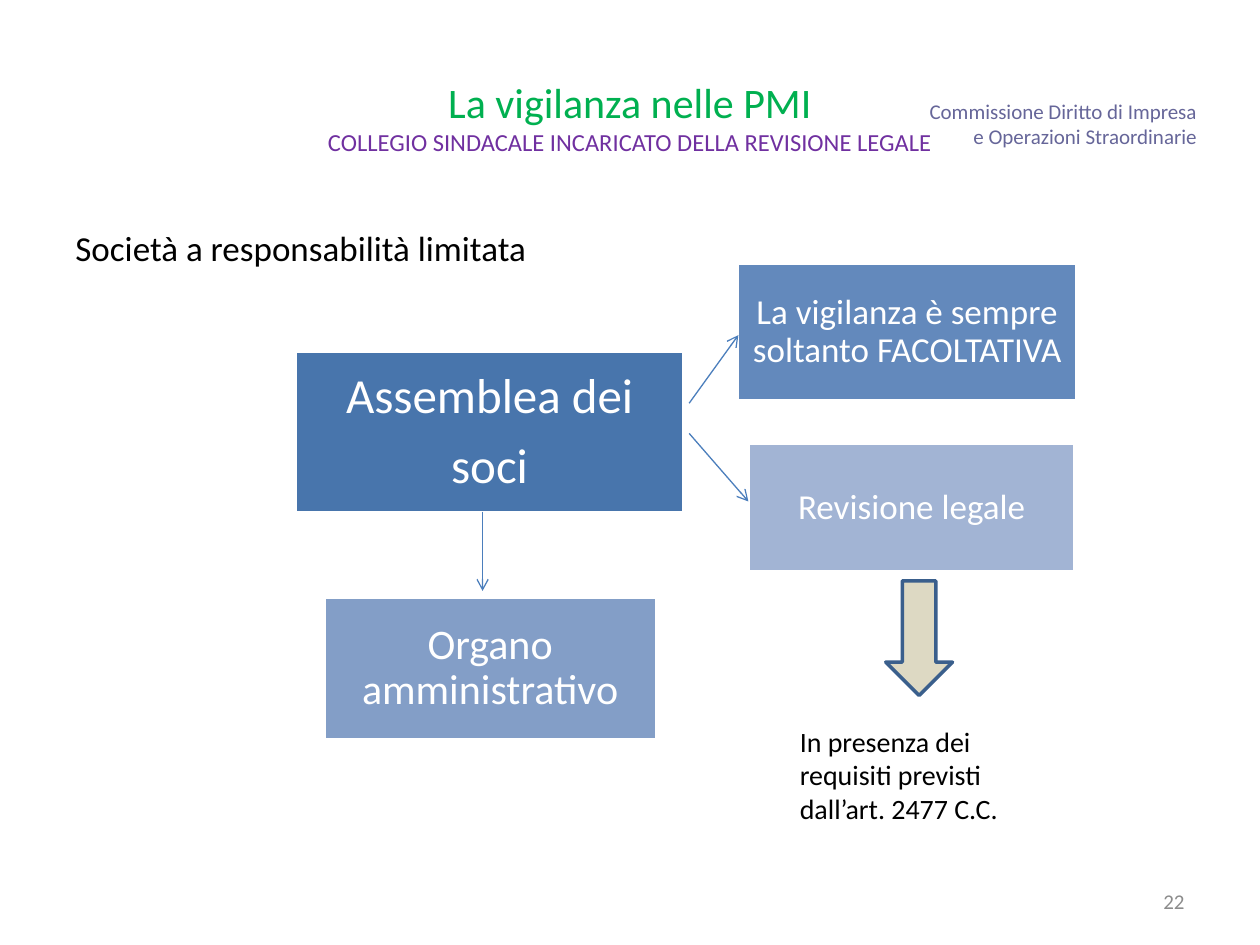
import pptx
import pptx.util
import pptx.dml.color
import pptx.enum.shapes
import pptx.enum.text
import pptx.oxml.ns
from dataclasses import dataclass
from lxml import etree
from pptx.util import Inches

ALIGN = pptx.enum.text.PP_ALIGN
ANCHOR = pptx.enum.text.MSO_ANCHOR
SHAPE = pptx.enum.shapes.MSO_SHAPE


@dataclass(frozen=True)
class Theme:
    """Hold the colours, typeface and type sizes of the slide."""
    font: str = "Calibri"
    white: str = "FFFFFF"
    black: str = "000000"
    heading: str = "00B050"
    subheading: str = "7030A0"
    committee: str = "666699"
    page_number: str = "8C8C8C"
    assembly: str = "4875AC"
    oversight: str = "6389BC"
    board: str = "839EC7"
    audit: str = "A2B4D4"
    arrow_fill: str = "DDD9C3"
    arrow_edge: str = "3A5F8C"
    link: str = "4B7EBC"
    small: int = 12
    caption: int = 14
    note: int = 16
    body: int = 20
    large: int = 24
    main: int = 28


THEME = Theme()


def rgb(colour):
    """Turn a hex string into a colour."""
    return pptx.dml.color.RGBColor.from_string(colour)


def add_run(paragraph, text, size, colour):
    """Append a formatted run to a paragraph."""
    run = paragraph.add_run()
    run.text = text
    run.font.name = THEME.font
    run.font.size = pptx.util.Pt(size)
    run.font.color.rgb = rgb(colour)


def write(frame, *lines, size, colour=THEME.black, align=ALIGN.LEFT,
          anchor=ANCHOR.TOP, inset=None, spacing=None, after=0):
    """Fill a text frame with one paragraph for each line."""
    frame.word_wrap = True
    frame.vertical_anchor = anchor
    if inset is not None:
        frame.margin_left = frame.margin_right = Inches(inset)
        frame.margin_top = frame.margin_bottom = Inches(inset)
    for index, line in enumerate(lines):
        paragraph = frame.add_paragraph() if index else frame.paragraphs[0]
        paragraph.alignment = align
        paragraph.line_spacing = spacing
        paragraph.space_after = pptx.util.Pt(after)
        add_run(paragraph, line, size, colour)


def add_label(slide, box, *lines, **style):
    """Add a text box and return its text frame."""
    frame = slide.shapes.add_textbox(*map(Inches, box)).text_frame
    write(frame, *lines, **style)
    return frame


def add_figure(slide, preset, box, fill, edge):
    """Add a filled preset shape with a two-point outline."""
    figure = slide.shapes.add_shape(preset, *map(Inches, box))
    figure.shadow.inherit = False
    figure.fill.solid()
    figure.fill.fore_color.rgb = rgb(fill)
    figure.line.color.rgb = rgb(edge)
    figure.line.width = pptx.util.Pt(2)
    return figure


def add_body(slide, box, fill, size, inset, *lines):
    """Add a rectangle that names a company body."""
    figure = add_figure(slide, SHAPE.RECTANGLE, box, fill, THEME.white)
    write(figure.text_frame, *lines, size=size, colour=THEME.white,
          align=ALIGN.CENTER, anchor=ANCHOR.MIDDLE, inset=inset,
          spacing=0.9, after=0.35 * size)


def add_link(slide, start, end):
    """Add a thin line with an open arrowhead at its end."""
    link = slide.shapes.add_connector(
        pptx.enum.shapes.MSO_CONNECTOR.STRAIGHT, *map(Inches, start + end))
    link.line.color.rgb = rgb(THEME.link)
    link.line.width = pptx.util.Pt(0.75)
    qn = pptx.oxml.ns.qn
    etree.SubElement(link.line._get_or_add_ln(), qn("a:tailEnd"), type="arrow")
    etree.SubElement(link._element.spPr, qn("a:effectLst"))


def main():
    """Build the slide and save it."""
    deck = pptx.Presentation()
    deck.slide_width, deck.slide_height = Inches(10), Inches(7.5)
    slide = deck.slides.add_slide(deck.slide_layouts[6])

    add_label(slide, (6.43, 0.75, 3.07, 0.43),
              "Commissione Diritto di Impresa", "e Operazioni Straordinarie",
              size=THEME.small, colour=THEME.committee, align=ALIGN.RIGHT,
              anchor=ANCHOR.BOTTOM, inset=0)
    title = add_label(slide, (0.5, 0.3, 9, 1.25), "La vigilanza nelle PMI",
                      size=THEME.large, colour=THEME.heading,
                      align=ALIGN.CENTER, anchor=ANCHOR.MIDDLE).paragraphs[0]
    title.add_line_break()
    add_run(title, "COLLEGIO SINDACALE INCARICATO DELLA REVISIONE LEGALE",
            THEME.caption, THEME.subheading)
    add_label(slide, (0.5, 1.75, 9, 4.95), "Società a responsabilità limitata",
              size=THEME.body)
    add_label(slide, (7.17, 6.95, 2.33, 0.4), "22", size=THEME.small,
              colour=THEME.page_number, align=ALIGN.RIGHT,
              anchor=ANCHOR.MIDDLE)

    add_body(slide, (2.34, 2.79, 3.09, 1.28), THEME.assembly, THEME.main, 0.12,
             "Assemblea dei", "soci")
    add_body(slide, (5.85, 2.09, 2.7, 1.09), THEME.oversight, THEME.body, 0.08,
             "La vigilanza è sempre soltanto FACOLTATIVA")
    add_body(slide, (2.57, 4.74, 2.64, 1.13), THEME.board, THEME.large, 0.1,
             "Organo amministrativo")
    add_body(slide, (5.94, 3.52, 2.59, 1.02), THEME.audit, THEME.body, 0.08,
             "Revisione legale")

    add_figure(slide, SHAPE.DOWN_ARROW, (7.03, 4.61, 0.53, 0.91),
               THEME.arrow_fill, THEME.arrow_edge)
    add_label(slide, (6.25, 5.7, 2.03, 0.91),
              "In presenza dei requisiti previsti dall’art. 2477 C.C.",
              size=THEME.note)

    add_link(slide, (3.83, 4.06), (3.83, 4.69))
    add_link(slide, (5.47, 3.44), (5.94, 3.98))
    add_link(slide, (5.47, 3.2), (5.86, 2.66))
    deck.save("out.pptx")


if __name__ == "__main__":
    main()
